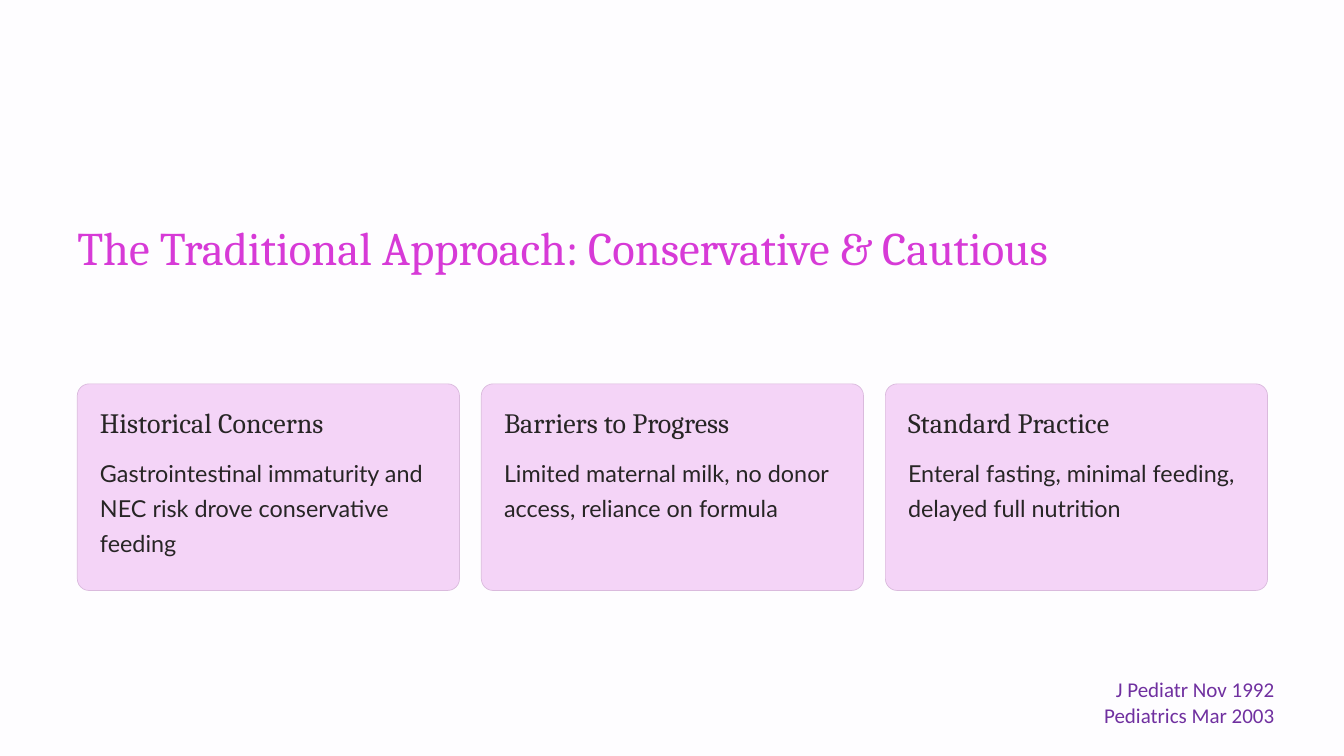
from dataclasses import dataclass

from pptx import Presentation
from pptx.dml.color import RGBColor
from pptx.enum.shapes import MSO_SHAPE
from pptx.enum.text import PP_ALIGN
from pptx.util import Inches, Pt

BACKGROUND = "FEFDFF"
CARD_FILL, CARD_LINE = "F4D4F7", "DABADD"
MAGENTA, INK, PURPLE = "D73AD7", "272525", "7030A0"

LEFT = 0.92
CARD_TOP, CARD_W, CARD_H = 4.57, 4.55, 2.46
CARD_STEP = 4.81
PAD = 0.27


@dataclass
class Style:
    font: str
    size: float
    color: str
    line_pt: float | None = None
    align: PP_ALIGN = PP_ALIGN.LEFT


@dataclass
class Card:
    heading: str
    body: str


TITLE = Style("Cambria", 40, MAGENTA, 55)
HEADING = Style("Cambria", 24, INK, 27.5)
BODY = Style("Lato", 20, INK, 30)
CITATION = Style("Calibri", 18, PURPLE, align=PP_ALIGN.RIGHT)

CARDS = [
    Card("Historical Concerns",
         "Gastrointestinal immaturity and NEC risk drove conservative feeding"),
    Card("Barriers to Progress",
         "Limited maternal milk, no donor access, reliance on formula"),
    Card("Standard Practice",
         "Enteral fasting, minimal feeding, delayed full nutrition"),
]


def rgb(value: str) -> RGBColor:
    return RGBColor.from_string(value)


def add_text(slide, lines: list[str], style: Style, left: float, top: float,
             width: float, height: float, wrap: bool = True,
             inset_x: float = 0, inset_y: float = 0) -> None:
    box = slide.shapes.add_textbox(Inches(left), Inches(top),
                                   Inches(width), Inches(height))
    tf = box.text_frame
    tf.word_wrap = wrap
    tf.margin_left = tf.margin_right = Inches(inset_x)
    tf.margin_top = tf.margin_bottom = Inches(inset_y)
    tf.text = "\n".join(lines)
    for p in tf.paragraphs:
        p.alignment = style.align
        if style.line_pt:
            p.line_spacing = Pt(style.line_pt)
        p.font.name = style.font
        p.font.size = Pt(style.size)
        p.font.color.rgb = rgb(style.color)


def add_card(slide, card: Card, left: float) -> None:
    sp = slide.shapes.add_shape(MSO_SHAPE.ROUNDED_RECTANGLE, Inches(left),
                                Inches(CARD_TOP), Inches(CARD_W), Inches(CARD_H))
    sp.adjustments[0] = 0.057
    sp.shadow.inherit = False
    sp.fill.solid()
    sp.fill.fore_color.rgb = rgb(CARD_FILL)
    sp.line.color.rgb = rgb(CARD_LINE)
    sp.line.width = Pt(0.6)
    text_left = left + PAD
    add_text(slide, [card.heading], HEADING, text_left, CARD_TOP + PAD,
             3.08, 0.38, wrap=False)
    add_text(slide, [card.body], BODY, text_left, CARD_TOP + 0.81,
             CARD_W - 2 * PAD, 0.84)


def main() -> None:
    prs = Presentation()
    prs.slide_width, prs.slide_height = Inches(16), Inches(9)
    s = prs.slides.add_slide(prs.slide_layouts[6])
    s.background.fill.solid()
    s.background.fill.fore_color.rgb = rgb(BACKGROUND)

    add_text(s, ["The Traditional Approach: Conservative & Cautious"], TITLE,
             LEFT, 2.51, 14.17, 1.54)
    for i, card in enumerate(CARDS):
        add_card(s, card, LEFT + i * CARD_STEP)
    add_text(s, ["J Pediatr Nov 1992", "Pediatrics Mar 2003"], CITATION,
             11.23, 8.01, 4.04, 0.71, inset_x=0.1, inset_y=0.05)
    prs.save("out.pptx")


if __name__ == "__main__":
    main()
